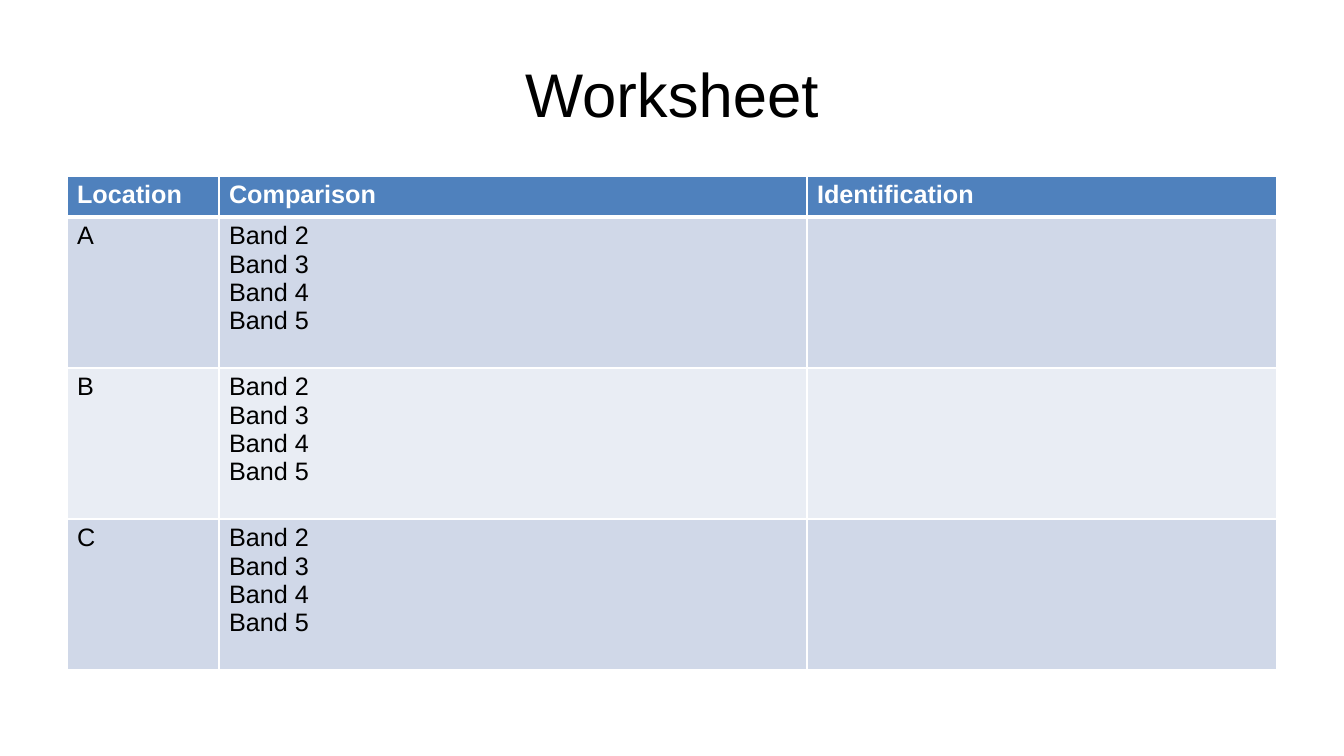
from lxml import etree
from pptx import Presentation
from pptx import util as u
from pptx.dml.color import RGBColor
from pptx.enum import text
from pptx.oxml import ns

# Content
HEADING = "Worksheet"
BANDS = ["Band 2", "Band 3", "Band 4", "Band 5"]
HEADERS = ["Location", "Comparison", "Identification"]
LOCATIONS = ["A", "B", "C"]
ROWS = [[[header] for header in HEADERS]]
ROWS += [[[location], BANDS, []] for location in LOCATIONS]

# Layout in px
SLIDE = (1344, 756)
TITLE_BOX = (67, 30, 1210, 126)
TABLE_LEFT, TABLE_TOP = 67, 176
COLUMN_WIDTHS = [152, 588, 470]
ROW_HEIGHTS = [41] + [151] * len(LOCATIONS)

FONT = "Arial"
COLORS = {"header": "4F81BD", "odd": "D0D8E8", "even": "E9EDF4",
          "white": "FFFFFF", "black": "000000"}


def px(length):
    return u.Emu(round(length * 914400 / 100.8))


def add_run(paragraph, words, size, color, bold=False):
    run = paragraph.add_run()
    run.text = words
    run.font.name = FONT
    run.font.size = u.Pt(size)
    run.font.bold = bold
    run.font.color.rgb = RGBColor.from_string(COLORS[color])


def set_borders(cell, widths):
    properties = cell._tc.get_or_add_tcPr()
    for side, width in widths.items():
        line = etree.SubElement(properties, ns.qn("a:ln" + side), w=str(u.Pt(width)))
        fill = etree.SubElement(line, ns.qn("a:solidFill"))
        etree.SubElement(fill, ns.qn("a:srgbClr"), val=COLORS["white"])


prs = Presentation()
prs.slide_width, prs.slide_height = map(px, SLIDE)
slide = prs.slides.add_slide(prs.slide_layouts[5])

# Title
title = slide.shapes.title
title.left, title.top, title.width, title.height = map(px, TITLE_BOX)
title.text_frame.vertical_anchor = text.MSO_ANCHOR.MIDDLE
heading = title.text_frame.paragraphs[0]
heading.alignment = text.PP_ALIGN.CENTER
add_run(heading, HEADING, 44, "black")

# Worksheet table
worksheet = slide.shapes.add_table(
    len(ROWS), len(HEADERS), px(TABLE_LEFT), px(TABLE_TOP),
    px(sum(COLUMN_WIDTHS)), px(sum(ROW_HEIGHTS))).table
for column, width in zip(worksheet.columns, COLUMN_WIDTHS):
    column.width = px(width)
for row, height in zip(worksheet.rows, ROW_HEIGHTS):
    row.height = px(height)

for r, row in enumerate(ROWS):
    is_header = r == 0
    band = "header" if is_header else "odd" if r % 2 else "even"
    for c, lines in enumerate(row):
        cell = worksheet.cell(r, c)
        set_borders(cell, {"L": 1, "R": 1, "T": 3 if r == 1 else 1,
                           "B": 3 if is_header else 1})
        cell.fill.solid()
        cell.fill.fore_color.rgb = RGBColor.from_string(COLORS[band])
        frame = cell.text_frame
        for i, words in enumerate(lines):
            paragraph = frame.add_paragraph() if i else frame.paragraphs[0]
            add_run(paragraph, words, 18, "white" if is_header else "black", is_header)

prs.save("out.pptx")
